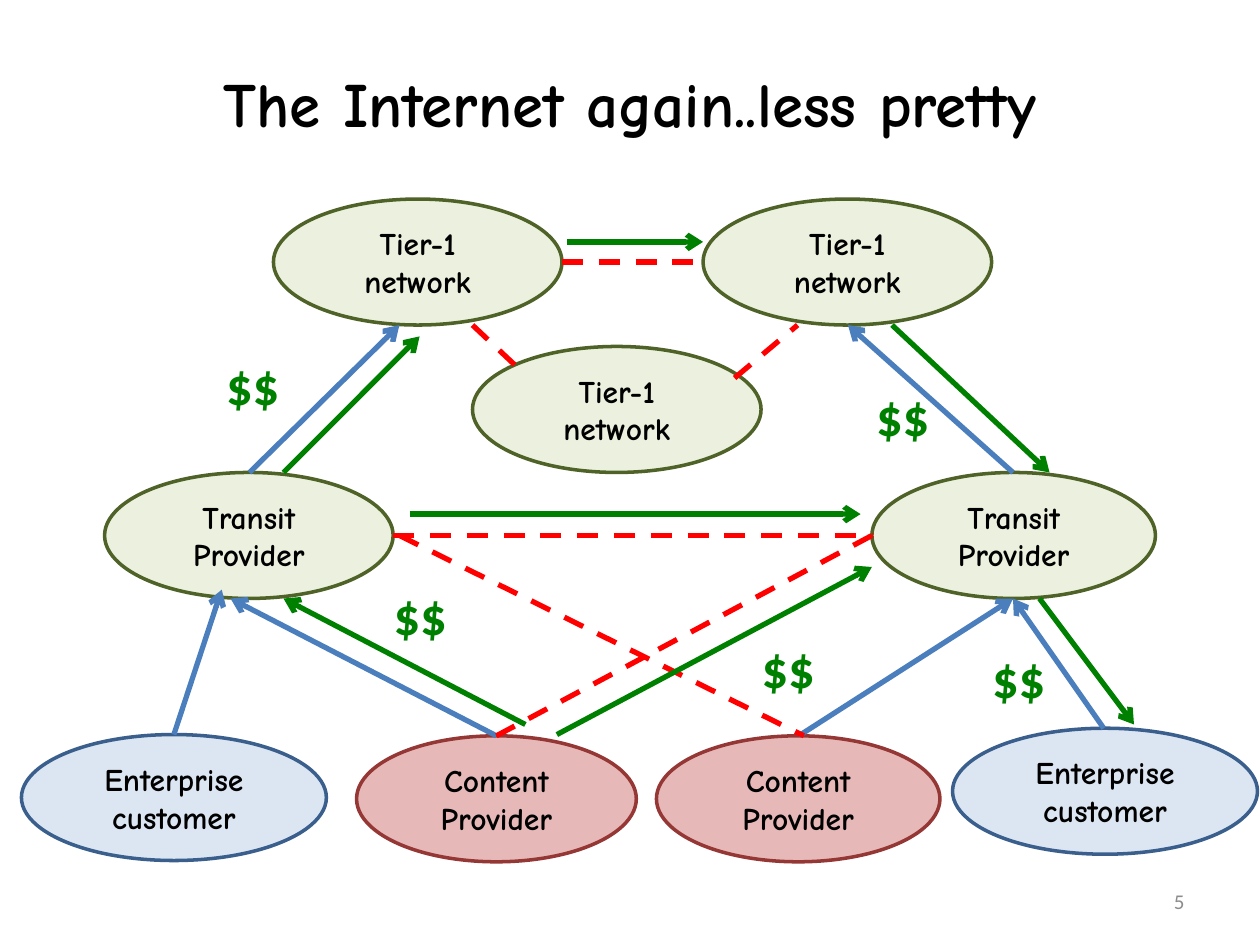
from lxml import etree
from pptx import Presentation
from pptx.dml.color import RGBColor
from pptx.enum.dml import MSO_LINE
from pptx.enum.shapes import MSO_CONNECTOR, MSO_SHAPE
from pptx.enum.text import MSO_ANCHOR, PP_ALIGN
from pptx.oxml.ns import qn
from pptx.util import Inches, Pt

OVAL = MSO_SHAPE.OVAL
STRAIGHT = MSO_CONNECTOR.STRAIGHT
DASH = MSO_LINE.DASH
MIDDLE, TOP = MSO_ANCHOR.MIDDLE, MSO_ANCHOR.TOP
CENTER, RIGHT = PP_ALIGN.CENTER, PP_ALIGN.RIGHT

COLORS = {
    "black": "000000",
    "number": "8C8C8C",
    "network": "EBF1DE",
    "network_edge": "4F6228",
    "customer": "DCE6F2",
    "customer_edge": "3A5F8C",
    "content": "E6B9B8",
    "content_edge": "953735",
    "payment": "4B7EBC",
    "peering": "FF0000",
    "traffic": "008000",
}
HAND, PLAIN = "Comic Neue", "Calibri"


def color(name):
    return RGBColor.from_string(COLORS[name])


def write(box, text, size, font, shade, bold=True, align=CENTER, anchor=MIDDLE, wrap=True):
    frame = box.text_frame
    frame.word_wrap = wrap
    frame.vertical_anchor = anchor
    para = frame.paragraphs[0]
    para.alignment = align
    span = para.add_run()
    span.text = text
    span.font.size = Pt(size)
    span.font.name = font
    span.font.bold = bold
    span.font.color.rgb = color(shade)


deck = Presentation()
deck.slide_width, deck.slide_height = Inches(10), Inches(7.5)
page = deck.slides.add_slide(deck.slide_layouts[6])

nodes = [
    ("Enterprise customer", "customer", 0.17, 5.83, 2.42),
    ("Enterprise customer", "customer", 7.56, 5.78, 2.42),
    ("Content Provider", "content", 2.83, 5.84, 2.22),
    ("Content Provider", "content", 5.21, 5.84, 2.25),
    ("Transit Provider", "network", 0.83, 3.75, 2.29),
    ("Transit Provider", "network", 6.92, 3.75, 2.25),
    ("Tier-1 network", "network", 2.17, 1.58, 2.29),
    ("Tier-1 network", "network", 5.58, 1.58, 2.29),
    ("Tier-1 network", "network", 3.75, 2.75, 2.29),
]
for label, kind, left, top, width in nodes:
    node = page.shapes.add_shape(OVAL, Inches(left), Inches(top), Inches(width), Inches(1))
    node.shadow.inherit = False
    node.fill.solid()
    node.fill.fore_color.rgb = color(kind)
    node.line.color.rgb = color(kind + "_edge")
    node.line.width = Pt(2)
    write(node, label, 18, HAND, "black")

links = {
    "payment": [
        (1.98, 3.75, 3.17, 2.58),
        (8.04, 3.75, 6.73, 2.58),
        (1.38, 5.83, 1.76, 4.68),
        (8.76, 5.78, 8.04, 4.75),
        (3.94, 5.84, 1.83, 4.75),
        (6.34, 5.84, 8.04, 4.75),
    ],
    "peering": [
        (3.12, 4.25, 6.92, 4.25),
        (3.17, 4.25, 6.38, 5.84),
        (6.92, 4.25, 3.94, 5.84),
        (4.46, 2.08, 5.58, 2.08),
        (5.83, 3, 6.33, 2.58),
        (3.75, 2.58, 4.09, 2.9),
    ],
    "traffic": [
        (4.17, 5.75, 2.25, 4.75),
        (8.25, 4.75, 9, 5.75),
        (2.25, 3.75, 3.33, 2.67),
        (7.08, 2.58, 8.33, 3.75),
        (4.5, 1.92, 5.58, 1.92),
        (3.25, 4.08, 6.83, 4.08),
        (4.42, 5.83, 6.92, 4.5),
    ],
}
for kind, routes in links.items():
    for route in routes:
        link = page.shapes.add_connector(STRAIGHT, *[Inches(value) for value in route])
        link.line.color.rgb = color(kind)
        link.line.width = Pt(3)
        if kind == "peering":
            link.line.dash_style = DASH
        else:
            etree.SubElement(link.line._get_or_add_ln(), qn("a:tailEnd"), type="arrow")
        etree.SubElement(link._element.spPr, qn("a:effectLst"))

title = page.shapes.add_textbox(Inches(0.5), Inches(0.33), Inches(9), Inches(0.97))
write(title, "The Internet again..less pretty", 36, HAND, "black")

for left, top in [(1.67, 2.75), (3, 4.58), (6.83, 3), (7.75, 5.08), (5.92, 5)]:
    fee = page.shapes.add_textbox(Inches(left), Inches(top), Inches(0.67), Inches(0.61))
    write(fee, "$$", 30, PLAIN, "traffic", anchor=TOP, wrap=False)

number = page.shapes.add_textbox(Inches(7.17), Inches(6.95), Inches(2.33), Inches(0.4))
write(number, "5", 12, PLAIN, "number", bold=False, align=RIGHT)

deck.save("out.pptx")
